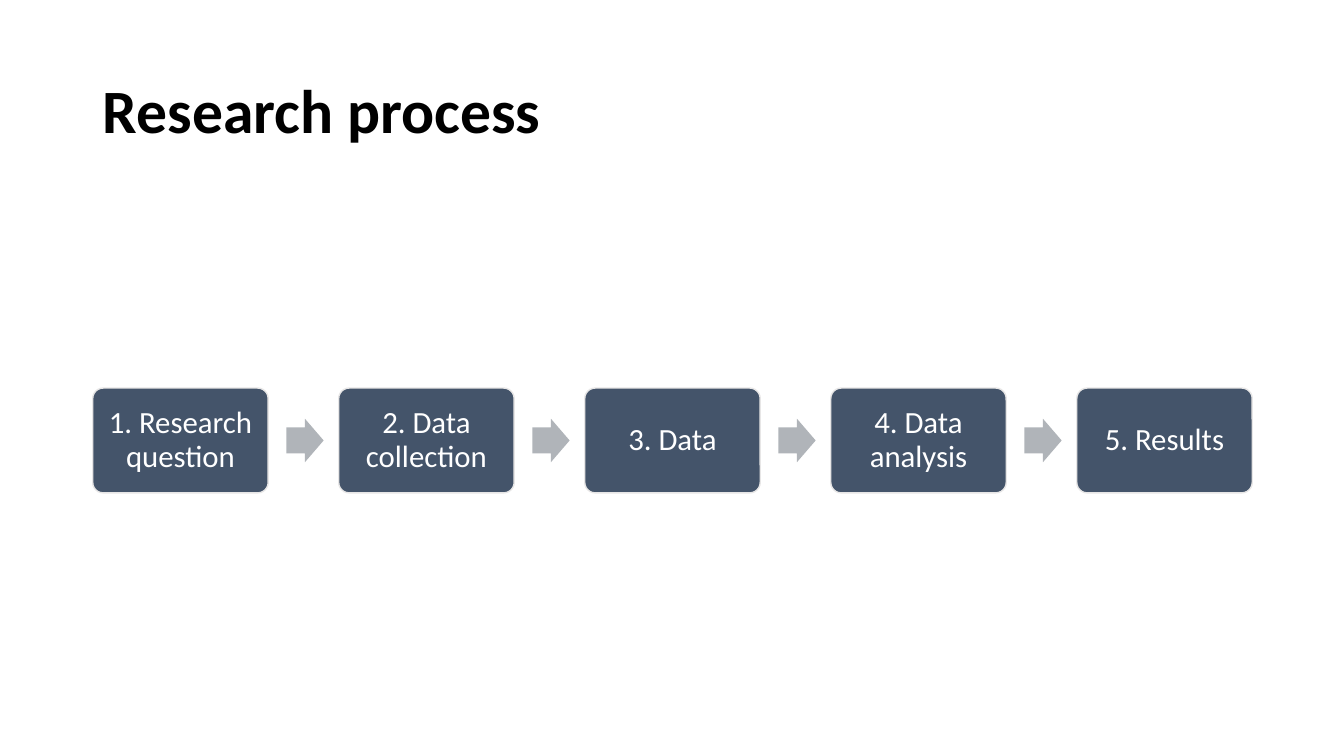
from pptx import Presentation
from pptx.dml.color import RGBColor
from pptx.enum.shapes import MSO_SHAPE
from pptx.enum.text import MSO_ANCHOR, PP_ALIGN
from pptx.util import Inches, Pt

ROUNDED = MSO_SHAPE.ROUNDED_RECTANGLE
ARROW = MSO_SHAPE.RIGHT_ARROW
MIDDLE = MSO_ANCHOR.MIDDLE
LEFT, CENTER = PP_ALIGN.LEFT, PP_ALIGN.CENTER

TITLE = "Research process"
STEPS = ["Research question", "Data collection", "Data", "Data analysis", "Results"]

COLORS = {
    "title": "000000",
    "step": "44546A",
    "outline": "E7E6E6",
    "label": "FFFFFF",
    "arrow": "B0B4B9",
}
FONT = "Calibri"

STEP_LEFT, STEP_TOP, STEP_WIDTH, STEP_HEIGHT = 0.92, 3.85, 1.74, 1.04
STEP_PITCH = 2.44
ARROW_OFFSET, ARROW_WIDTH, ARROW_HEIGHT = 1.92, 0.37, 0.43
ARROW_TOP = STEP_TOP + (STEP_HEIGHT - ARROW_HEIGHT) / 2
LABEL_INSET = 0.09


def color(name):
    return RGBColor.from_string(COLORS[name])


def write(frame, text, size, color_name, align, bold=False):
    frame.word_wrap = True
    frame.vertical_anchor = MIDDLE
    frame.text = text
    paragraph = frame.paragraphs[0]
    paragraph.alignment = align
    paragraph.line_spacing = 0.9
    paragraph.font.name = FONT
    paragraph.font.size = Pt(size)
    paragraph.font.bold = bold
    paragraph.font.color.rgb = color(color_name)


def add_filled(slide, preset, left, top, width, height, fill, adjustments):
    shape = slide.shapes.add_shape(
        preset, Inches(left), Inches(top), Inches(width), Inches(height))
    for index, value in enumerate(adjustments):
        shape.adjustments[index] = value
    shape.shadow.inherit = False
    shape.fill.solid()
    shape.fill.fore_color.rgb = color(fill)
    return shape


def add_step(slide, left, label):
    step = add_filled(slide, ROUNDED, left, STEP_TOP, STEP_WIDTH, STEP_HEIGHT,
                      "step", [0.1])
    step.line.color.rgb = color("outline")
    step.line.width = Pt(1)
    frame = step.text_frame
    frame.margin_left = frame.margin_right = Inches(LABEL_INSET)
    frame.margin_top = frame.margin_bottom = Inches(LABEL_INSET)
    write(frame, label, 22, "label", CENTER)


def add_arrow(slide, left):
    arrow = add_filled(slide, ARROW, left, ARROW_TOP, ARROW_WIDTH, ARROW_HEIGHT,
                       "arrow", [0.6, 0.5])
    arrow.line.fill.background()


def main():
    deck = Presentation()
    deck.slide_width, deck.slide_height = Inches(13.33), Inches(7.5)
    slide = deck.slides.add_slide(deck.slide_layouts[5])

    title = slide.shapes.title
    title.left, title.top = Inches(0.92), Inches(0.4)
    title.width, title.height = Inches(11.5), Inches(1.45)
    write(title.text_frame, TITLE, 44, "title", LEFT, bold=True)

    for index, step in enumerate(STEPS):
        left = STEP_LEFT + index * STEP_PITCH
        add_step(slide, left, f"{index + 1}. {step}")
        if index < len(STEPS) - 1:
            add_arrow(slide, left + ARROW_OFFSET)

    deck.save("out.pptx")


if __name__ == "__main__":
    main()
